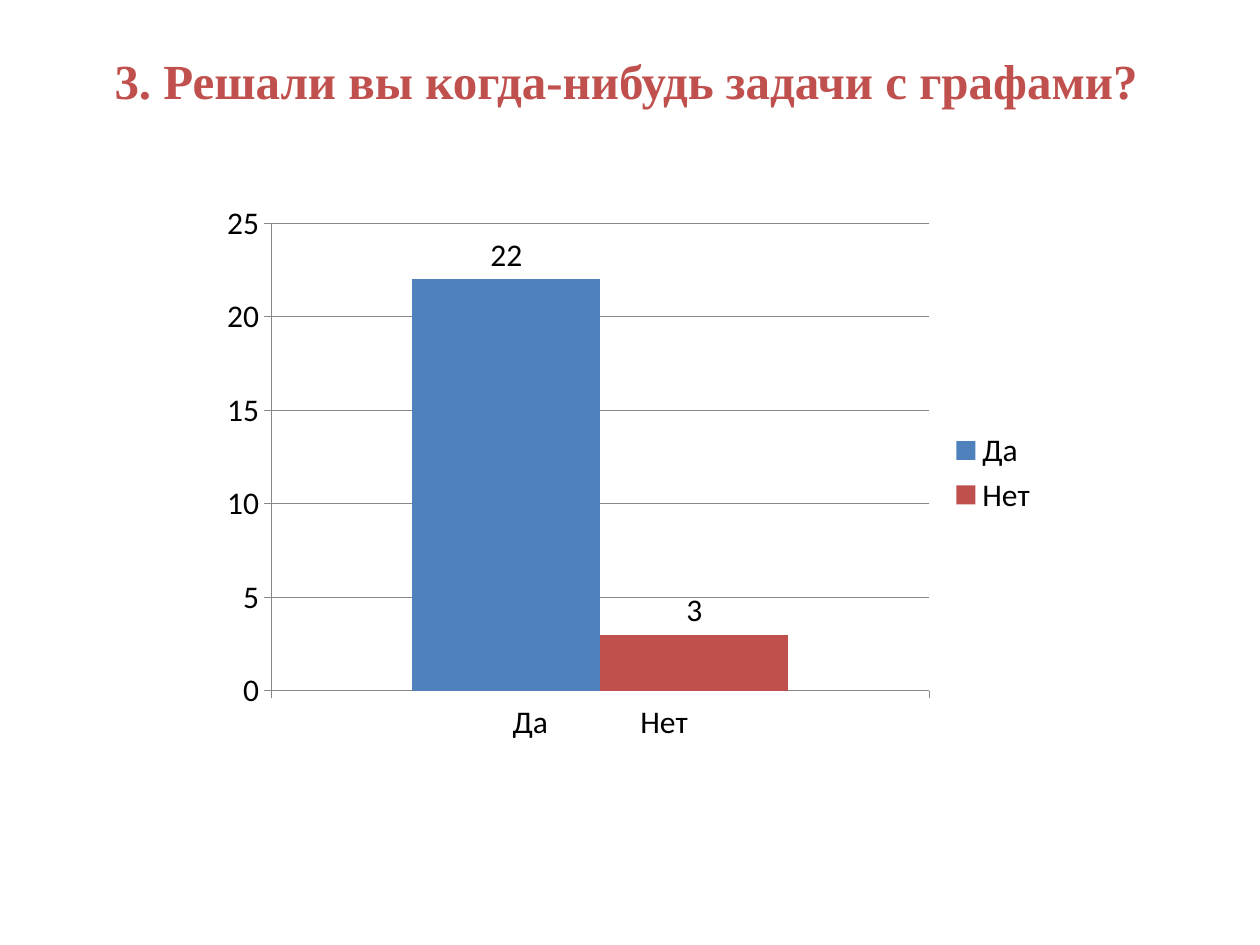
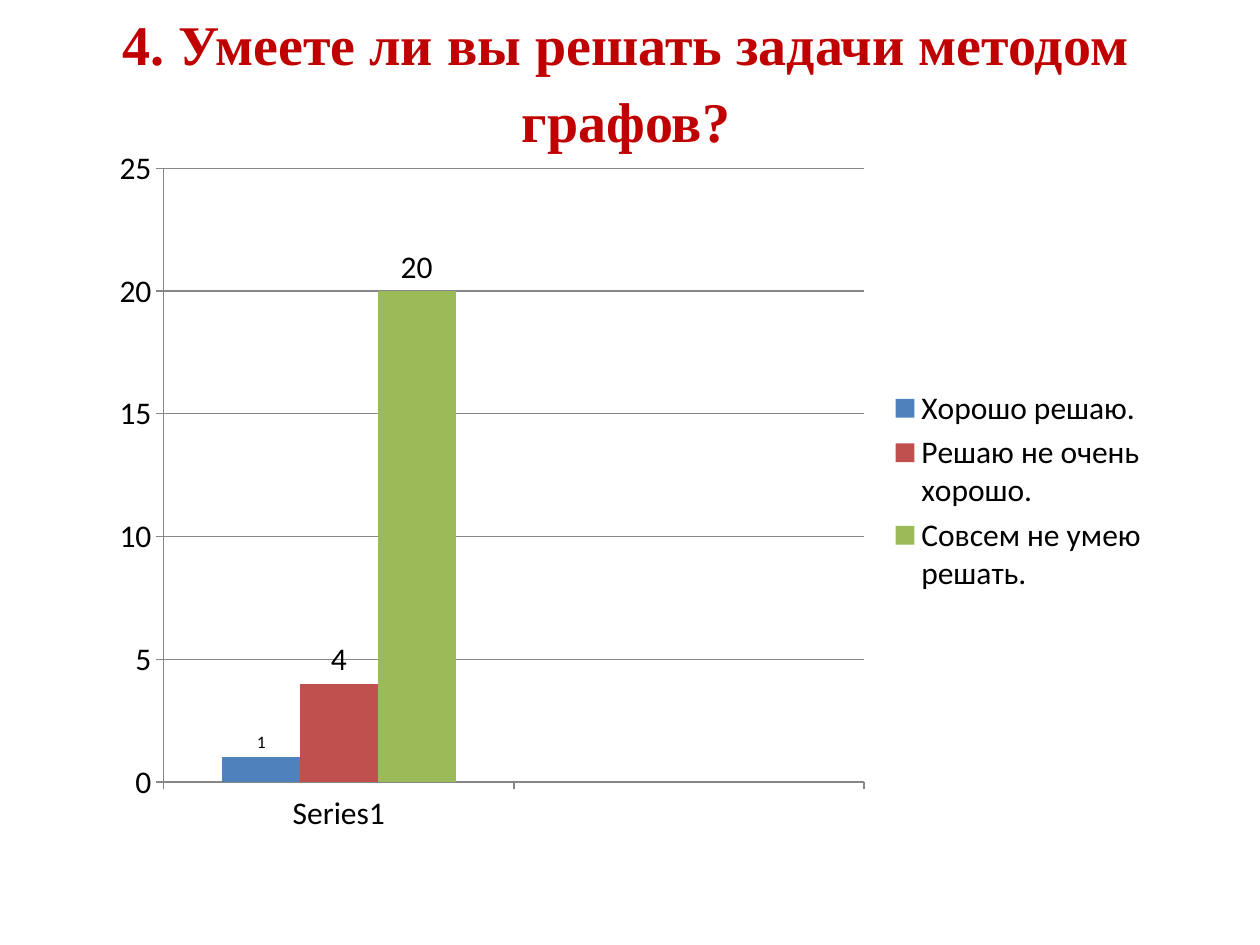
from dataclasses import dataclass

from pptx import Presentation
from pptx.chart.chart import Chart
from pptx.chart.data import CategoryChartData
from pptx.dml.color import RGBColor
from pptx.enum.chart import XL_CHART_TYPE, XL_LABEL_POSITION, XL_LEGEND_POSITION
from pptx.enum.text import MSO_ANCHOR, MSO_AUTO_SIZE, PP_ALIGN
from pptx.slide import Slide
from pptx.util import Cm, Pt


@dataclass(frozen=True)
class Theme:
    serif: str = "Times New Roman"
    sans: str = "Calibri"
    text: str = "000000"
    line: str = "878787"
    blue: str = "4F81BD"
    red: str = "C0504D"
    green: str = "9BBB59"
    dark: str = "C00000"
    head: int = 28
    large: int = 32
    body: int = 18
    small: int = 10


THEME = Theme()


@dataclass(frozen=True)
class Box:
    """A place on the slide, in centimetres."""
    left: float
    top: float
    width: float
    height: float

    def lengths(self) -> tuple[Cm, Cm, Cm, Cm]:
        return Cm(self.left), Cm(self.top), Cm(self.width), Cm(self.height)


@dataclass(frozen=True)
class Title:
    text: str
    box: Box
    size: int
    color: str


@dataclass(frozen=True)
class Answer:
    name: str
    count: int
    color: str
    size: int = THEME.body


@dataclass(frozen=True)
class Survey:
    title: Title
    box: Box
    groups: list[str]
    answers: list[Answer]


SURVEYS = [
    Survey(
        Title("3. Решали вы когда-нибудь задачи с графами?",
              Box(1.19, 1.52, 22.86, 1.19), THEME.head, THEME.red),
        Box(4.24, 3.89, 16.94, 11.28),
        ["Да             Нет"],
        [Answer("Да", 22, THEME.blue),
         Answer("Нет", 3, THEME.red)],
    ),
    Survey(
        Title("4. Умеете ли вы решать задачи методом графов?",
              Box(1.19, 1.73, 22.86, 0.99), THEME.large, THEME.dark),
        Box(1.98, 2.72, 21.44, 14.35),
        ["Series1", ""],
        [Answer("Хорошо решаю.", 1, THEME.blue, THEME.small),
         Answer("Решаю не очень хорошо.", 4, THEME.red),
         Answer("Совсем не умею решать.", 20, THEME.green)],
    ),
]


def color(code: str) -> RGBColor:
    return RGBColor.from_string(code)


def set_title(slide: Slide, title: Title) -> None:
    """Fill the title; its closing line break lifts the text in the box."""
    shape = slide.shapes.title
    shape.left, shape.top, shape.width, shape.height = title.box.lengths()
    frame = shape.text_frame
    frame.text = title.text + "\v"
    frame.auto_size = MSO_AUTO_SIZE.NONE
    frame.word_wrap = True
    frame.vertical_anchor = MSO_ANCHOR.MIDDLE
    para = frame.paragraphs[0]
    para.alignment = PP_ALIGN.CENTER
    para.line_spacing = 1.15
    para.space_after = Pt(10)
    font = para.font
    font.name, font.size, font.bold = THEME.serif, Pt(title.size), True
    font.color.rgb = color(title.color)


def style_axes(chart: Chart) -> None:
    scale = chart.value_axis
    scale.minimum_scale, scale.maximum_scale, scale.major_unit = 0, 25, 5
    scale.has_major_gridlines = True
    for part in (scale, chart.category_axis, scale.major_gridlines):
        part.format.line.color.rgb = color(THEME.line)
        part.format.line.width = Pt(0.75)


def style_bars(chart: Chart, answers: list[Answer]) -> None:
    plot = chart.plots[0]
    plot.gap_width = 150
    plot.overlap = 0
    plot.vary_by_categories = False
    for bar, answer in zip(plot.series, answers):
        bar.invert_if_negative = False
        bar.format.fill.solid()
        bar.format.fill.fore_color.rgb = color(answer.color)
        labels = bar.data_labels
        labels.show_value = True
        labels.position = XL_LABEL_POSITION.OUTSIDE_END
        labels.font.size = Pt(answer.size)


def add_bars(slide: Slide, survey: Survey) -> None:
    data = CategoryChartData(number_format="General")
    data.categories = survey.groups
    blanks = [None] * (len(survey.groups) - 1)
    for answer in survey.answers:
        data.add_series(answer.name, [answer.count, *blanks])
    chart = slide.shapes.add_chart(
        XL_CHART_TYPE.COLUMN_CLUSTERED, *survey.box.lengths(), data).chart
    chart.has_title = False
    chart.font.name, chart.font.size = THEME.sans, Pt(THEME.body)
    chart.font.color.rgb = color(THEME.text)
    chart.has_legend = True
    chart.legend.position = XL_LEGEND_POSITION.RIGHT
    chart.legend.include_in_layout = False
    style_axes(chart)
    style_bars(chart, survey.answers)


def main() -> None:
    deck = Presentation()
    deck.slide_width, deck.slide_height = Cm(25.4), Cm(19.05)
    layout = deck.slide_layouts.get_by_name("Title Only")
    for survey in SURVEYS:
        slide = deck.slides.add_slide(layout)
        set_title(slide, survey.title)
        add_bars(slide, survey)
    deck.save("out.pptx")


if __name__ == "__main__":
    main()
